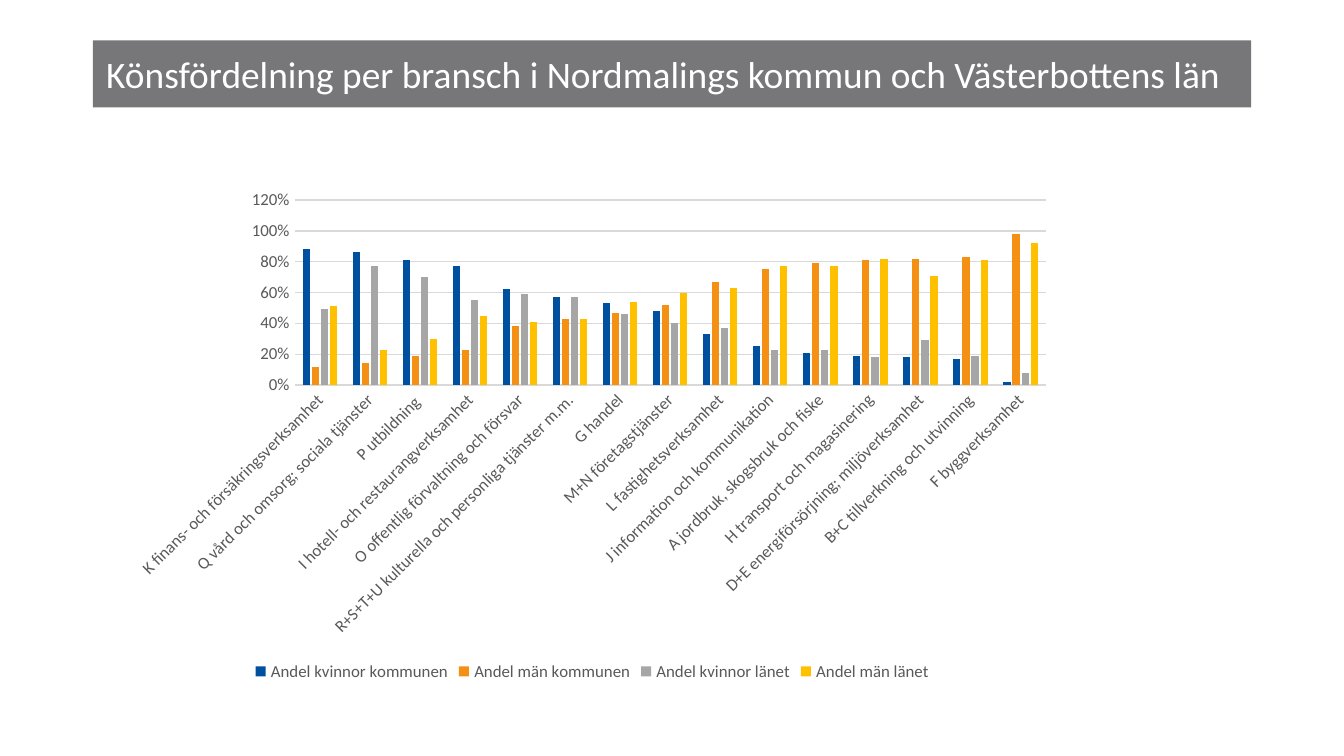
import pptx
import pptx.chart.data
import pptx.dml.color
import pptx.enum.chart
import pptx.enum.text
import pptx.util
from dataclasses import dataclass

Pt = pptx.util.Pt
rgb = pptx.dml.color.RGBColor.from_string

TITLE = "Könsfördelning per bransch i Nordmalings kommun och Västerbottens län"
# Industry: women municipality, men municipality, women county, men county
INDUSTRIES = [
    ("K finans- och försäkringsverksamhet", 0.88, 0.12, 0.49, 0.51),
    ("Q vård och omsorg; sociala tjänster", 0.86, 0.14, 0.77, 0.23),
    ("P utbildning ", 0.81, 0.19, 0.70, 0.30),
    ("I hotell- och restaurangverksamhet", 0.77, 0.23, 0.55, 0.45),
    ("O offentlig förvaltning och försvar", 0.62, 0.38, 0.59, 0.41),
    ("R+S+T+U kulturella och personliga tjänster m.m.", 0.57, 0.43, 0.57, 0.43),
    ("G handel", 0.53, 0.47, 0.46, 0.54),
    ("M+N företagstjänster", 0.48, 0.52, 0.40, 0.60),
    ("L fastighetsverksamhet", 0.33, 0.67, 0.37, 0.63),
    ("J information och kommunikation", 0.25, 0.75, 0.23, 0.77),
    ("A jordbruk, skogsbruk och fiske", 0.21, 0.79, 0.23, 0.77),
    ("H transport och magasinering", 0.19, 0.81, 0.18, 0.82),
    ("D+E energiförsörjning; miljöverksamhet", 0.18, 0.82, 0.29, 0.71),
    ("B+C tillverkning och utvinning", 0.17, 0.83, 0.19, 0.81),
    ("F byggverksamhet", 0.02, 0.98, 0.08, 0.92),
]
SERIES = [
    ("Andel kvinnor kommunen", "0050A0"),
    ("Andel män kommunen", "F49014"),
    ("Andel kvinnor länet", "A6A6A6"),
    ("Andel män länet", "FFC000"),
]


@dataclass(frozen=True)
class Theme:
    font: str = "Calibri"
    bar: str = "77777A"
    title: str = "FFFFFF"
    text: str = "595959"
    grid: str = "D9D9D9"
    title_size: int = 20
    chart_size: int = 10
    label_size: int = 9


THEME = Theme()


def style(font, size, color):
    font.name = THEME.font
    font.size = Pt(size)
    font.bold = False
    font.color.rgb = rgb(color)


def style_line(line):
    line.color.rgb = rgb(THEME.grid)
    line.width = Pt(0.75)


def add_title(s):
    sp = s.shapes.title
    sp.left, sp.top, sp.width, sp.height = Pt(49.7), Pt(21.6), Pt(620.6), Pt(36)
    sp.fill.solid()
    sp.fill.fore_color.rgb = rgb(THEME.bar)
    tf = sp.text_frame
    tf.word_wrap = True
    tf.auto_size = pptx.enum.text.MSO_AUTO_SIZE.NONE
    tf.vertical_anchor = pptx.enum.text.MSO_ANCHOR.MIDDLE
    p = tf.paragraphs[0]
    p.alignment = pptx.enum.text.PP_ALIGN.LEFT
    r = p.add_run()
    r.text = TITLE
    style(r.font, THEME.title_size, THEME.title)


def add_gender_chart(s):
    data = pptx.chart.data.CategoryChartData(number_format="0%")
    names, *shares = zip(*INDUSTRIES)
    data.categories = names
    for (name, _), values in zip(SERIES, shares):
        data.add_series(name, values)
    chart = s.shapes.add_chart(
        pptx.enum.chart.XL_CHART_TYPE.COLUMN_CLUSTERED,
        Pt(64.1), Pt(96.5), Pt(506.2), Pt(271.4), data).chart
    style(chart.font, THEME.chart_size, "000000")
    chart.has_title = False

    plot = chart.plots[0]
    plot.gap_width = 219
    plot.overlap = -27
    plot.vary_by_categories = False
    for series, (_, color) in zip(plot.series, SERIES):
        series.format.fill.solid()
        series.format.fill.fore_color.rgb = rgb(color)
        series.invert_if_negative = False

    cat, val = chart.category_axis, chart.value_axis
    for axis in (cat, val):
        axis.major_tick_mark = pptx.enum.chart.XL_TICK_MARK.NONE
        axis.minor_tick_mark = pptx.enum.chart.XL_TICK_MARK.NONE
        style(axis.tick_labels.font, THEME.label_size, THEME.text)
    style_line(cat.format.line)
    val.format.line.fill.background()
    val.has_major_gridlines = True
    style_line(val.major_gridlines.format.line)
    val.tick_labels.number_format = "0%"
    val.tick_labels.number_format_is_linked = False
    val.minimum_scale, val.maximum_scale, val.major_unit = 0, 1.2, 0.2

    chart.has_legend = True
    chart.legend.position = pptx.enum.chart.XL_LEGEND_POSITION.BOTTOM
    chart.legend.include_in_layout = False
    style(chart.legend.font, THEME.label_size, THEME.text)


def main():
    prs = pptx.Presentation()
    prs.slide_width, prs.slide_height = Pt(720), Pt(405)
    s = prs.slides.add_slide(prs.slide_layouts[5])
    add_title(s)
    add_gender_chart(s)
    prs.save("out.pptx")


if __name__ == "__main__":
    main()
